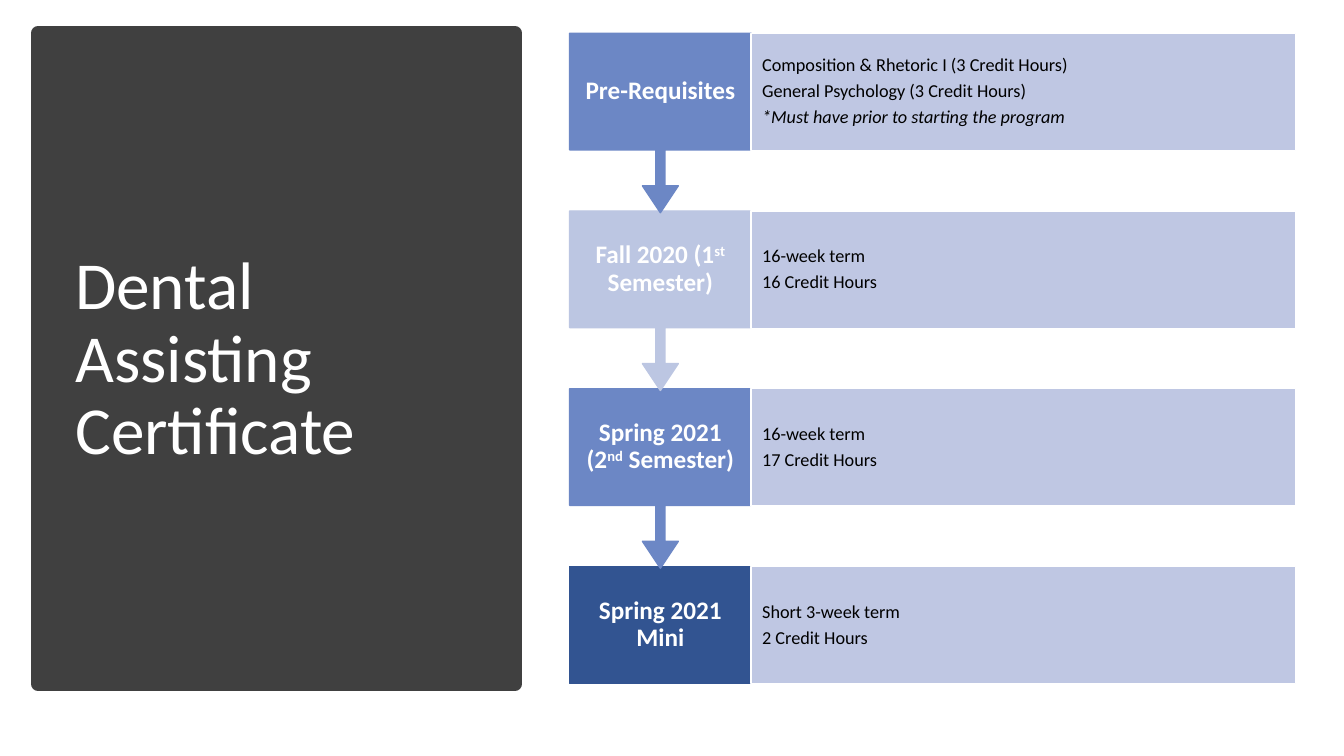
"""Build the certificate slide: a title panel beside a chain of terms."""
from dataclasses import dataclass

from lxml import etree
from pptx import Presentation
from pptx.dml.color import RGBColor
from pptx.enum.shapes import MSO_SHAPE
from pptx.enum.text import MSO_ANCHOR, MSO_AUTO_SIZE, PP_ALIGN
from pptx.oxml.ns import qn
from pptx.util import Inches, Pt

RECT, CALL = MSO_SHAPE.RECTANGLE, MSO_SHAPE.DOWN_ARROW_CALLOUT
MID, FIXED = MSO_ANCHOR.MIDDLE, MSO_AUTO_SIZE.NONE
LEFT, MIDST = PP_ALIGN.LEFT, PP_ALIGN.CENTER


@dataclass(frozen=True)
class Theme:
    font: str = "Calibri"
    dark: str = "404040"
    white: str = "FFFFFF"
    black: str = "000000"
    blue: str = "6C87C5"
    pale: str = "BCC6E2"
    navy: str = "325491"
    tint: str = "B9C2E1"
    head: int = 48
    label: int = 18
    body: int = 13


@dataclass(frozen=True)
class Grid:
    left: float = 5.65
    top: float = 0.33
    col: float = 1.8
    row: float = (5.62 - 0.33) / 3

    def place(self, col: float, row: float, wide: float, high: float) -> dict:
        return {
            "left": Inches(self.left + col * self.col),
            "top": Inches(self.top + row * self.row),
            "width": Inches(wide * self.col),
            "height": Inches(high * self.row),
        }


@dataclass(frozen=True)
class Term:
    label: tuple[str, ...]
    fill: str
    lines: tuple[str, ...]
    note: str = ""


LOOK, GRID = Theme(), Grid()
BOX = 0.66
STEP = 1.01
TERMS = (
    Term(("Pre-Requisites",), LOOK.blue,
         ("Composition & Rhetoric I (3 Credit Hours)", "General Psychology (3 Credit Hours)"),
         "*Must have prior to starting the program"),
    Term(("Fall 2020 (1", "st", " Semester)"), LOOK.pale, ("16-week term", "16 Credit Hours")),
    Term(("Spring 2021 (2", "nd", " Semester)"), LOOK.blue, ("16-week term", "17 Credit Hours")),
    Term(("Spring 2021 Mini",), LOOK.navy, ("Short 3-week term", "2 Credit Hours")),
)


def apply(item, form: dict) -> None:
    for key, value in form.items():
        setattr(item, key, value)


def style(font, size: int, color: str, **more) -> None:
    apply(font, {"name": LOOK.font, "size": Pt(size), **more})
    font.color.rgb = RGBColor.from_string(color)


def frame(shape, side: float, edge: float):
    text = shape.text_frame
    apply(text, {
        "word_wrap": True, "auto_size": FIXED, "vertical_anchor": MID,
        "margin_left": Inches(side), "margin_right": Inches(side),
        "margin_top": Inches(edge), "margin_bottom": Inches(edge),
    })
    return text


def block(slide, kind, spot: dict, fill: str, line: str, width: float = 1):
    shape = slide.shapes.add_shape(kind, **spot)
    shape.shadow.inherit = False
    shape.fill.solid()
    shape.fill.fore_color.rgb = RGBColor.from_string(fill)
    shape.line.color.rgb = RGBColor.from_string(line)
    shape.line.width = Pt(width)
    return shape


def label(slide, term: Term, row: int, last: bool) -> None:
    kind, high = (RECT, BOX) if last else (CALL, STEP)
    shape = block(slide, kind, GRID.place(0, row, 1, high), term.fill, term.fill)
    if not last:
        for i, value in enumerate((0.05, 0.1, 0.15, 0.65)):
            shape.adjustments[i] = value
    para = frame(shape, 0.13, 0.14).paragraphs[0]
    apply(para, {"alignment": MIDST, "line_spacing": 0.9})
    for i, part in enumerate(term.label):
        run = para.add_run()
        run.text = part
        style(run.font, LOOK.label, LOOK.white, bold=True)
        if i % 2:
            run.font._element.set("baseline", "30000")


def detail(slide, term: Term, row: int) -> None:
    shape = block(slide, RECT, GRID.place(1, row, 3, BOX), LOOK.tint, LOOK.white)
    tone = shape._element.spPr.find(qn("a:solidFill")).find(qn("a:srgbClr"))
    etree.SubElement(tone, qn("a:alpha")).set("val", "90000")
    text = frame(shape, 0.11, 0.18)
    lines = term.lines + ((term.note,) if term.note else ())
    for i, line in enumerate(lines):
        para = text.add_paragraph() if i else text.paragraphs[0]
        apply(para, {"alignment": LEFT, "line_spacing": 0.9, "space_after": Pt(4.5)})
        run = para.add_run()
        run.text = line
        style(run.font, LOOK.body, LOOK.black, italic=line == term.note)


def heading(slide) -> None:
    panel = block(slide, RECT, GRID.place(-2.93, 0, 2.63, 3.66), LOOK.dark, LOOK.dark, 10)
    title = slide.shapes.title
    title._element.addprevious(panel._element)
    apply(title, GRID.place(-2.78, 0.21, 2.31, 3.26))
    para = frame(title, 0.1, 0.05).paragraphs[0]
    apply(para, {"alignment": LEFT, "line_spacing": 0.9})
    run = para.add_run()
    run.text = "Dental Assisting Certificate"
    style(run.font, LOOK.head, LOOK.white)


def main() -> None:
    deck = Presentation()
    apply(deck, {"slide_width": Inches(13.33), "slide_height": Inches(7.5)})
    slide = deck.slides.add_slide(deck.slide_layouts[5])
    heading(slide)
    for row, term in reversed(list(enumerate(TERMS))):
        label(slide, term, row, row == len(TERMS) - 1)
        detail(slide, term, row)
    deck.save("out.pptx")


if __name__ == "__main__":
    main()
